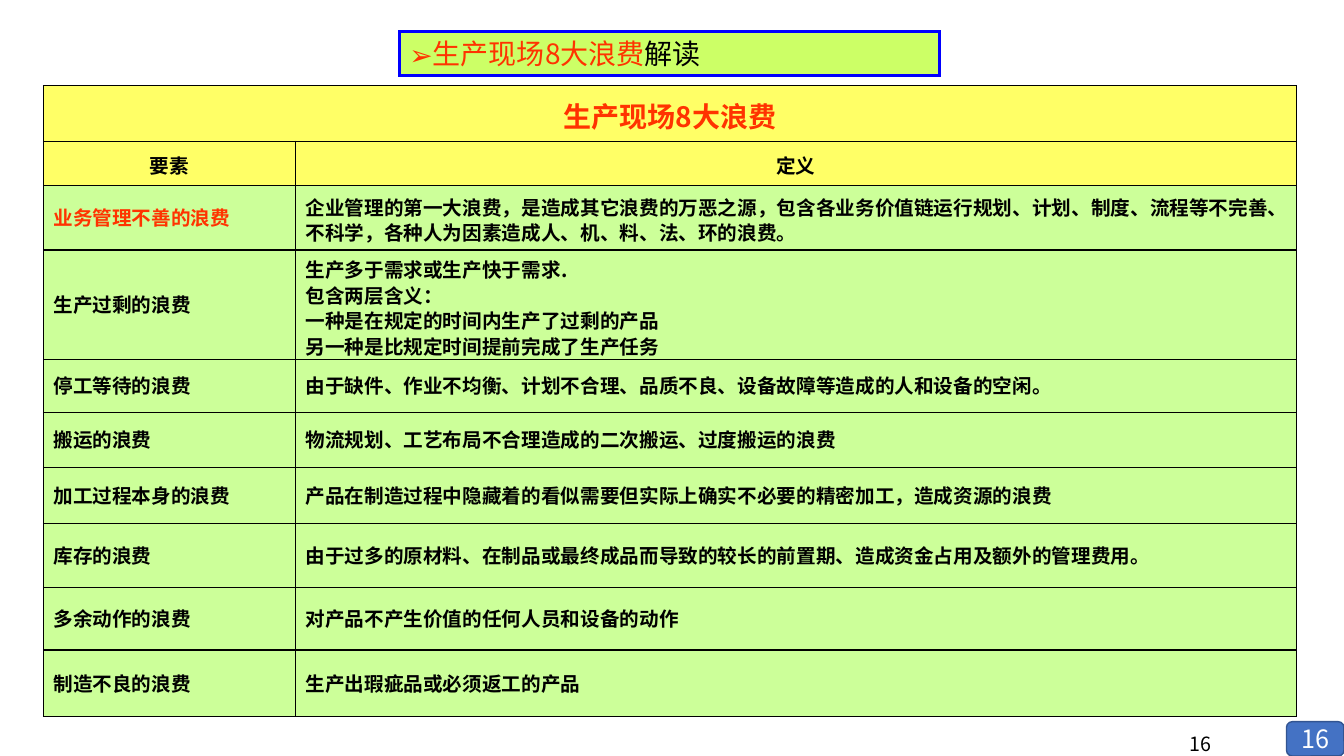
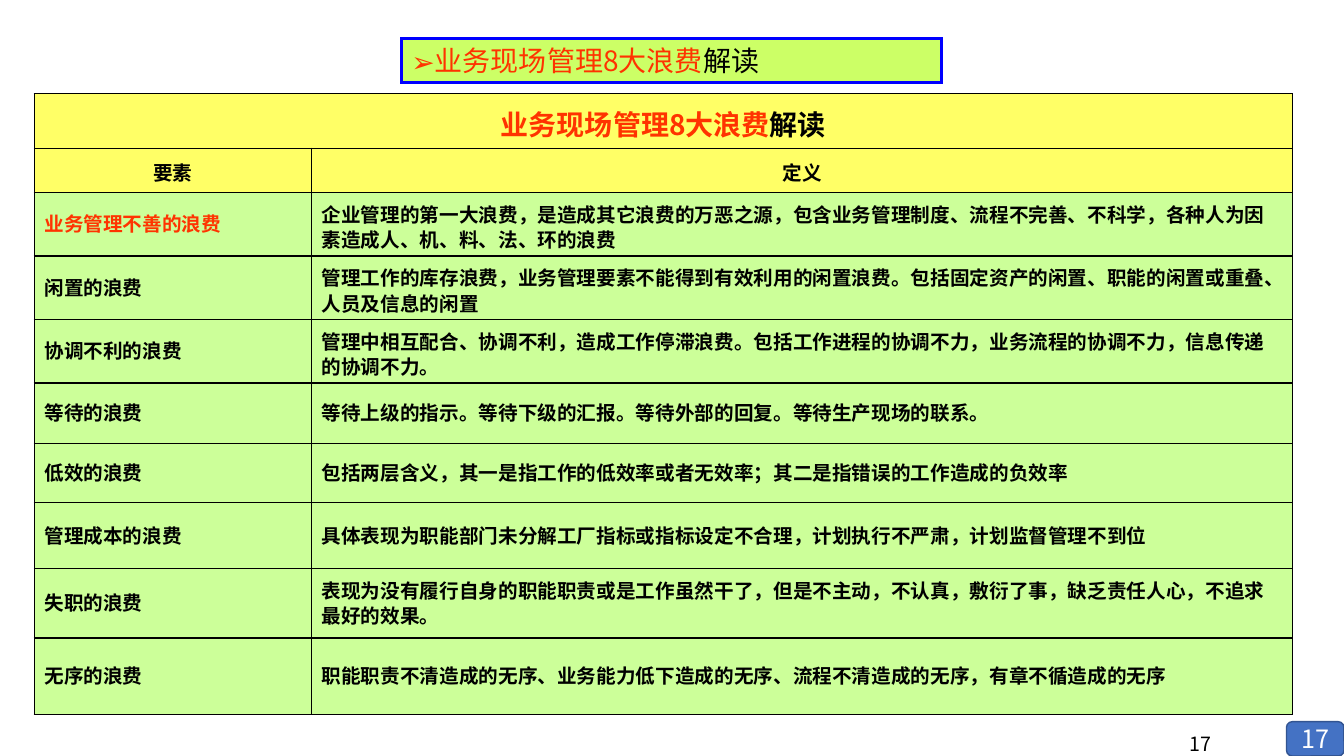
"""Build two slides of tables that explain the eight wastes."""
import dataclasses

import lxml.etree
import pptx
import pptx.dml.color
import pptx.enum.shapes
import pptx.enum.text
import pptx.oxml.ns
import pptx.util

Inches = pptx.util.Inches
Pt = pptx.util.Pt
qn = pptx.oxml.ns.qn
ALIGN = pptx.enum.text.PP_ALIGN
ANCHOR = pptx.enum.text.MSO_ANCHOR
SHAPE = pptx.enum.shapes.MSO_SHAPE

FONT = "Noto Sans CJK SC"
BLACK, WHITE, RED = "000000", "FFFFFF", "FF3300"
YELLOW, GREEN, LIME = "FFFF66", "CCFF99", "CCFF66"
BLUE, BADGE, BADGE_LINE = "0000FF", "4472C4", "325491"
HEADINGS = ("要素", "定义")
SUFFIX = "解读"
MARGIN = 0.09


@dataclasses.dataclass
class WasteSlide:
    """Content and geometry of one waste table slide."""
    number: int
    topic: str
    table_suffix: str
    title_at: tuple[float, float]
    table_at: tuple[float, float]
    cols: tuple[float, float]
    heights: tuple[float, ...]
    tight_rows: dict[int, float]
    rows: tuple[tuple[str, str], ...]


SLIDES = (
    WasteSlide(
        16, "生产现场8大浪费", "", (3.96, 0.31), (0.43, 0.85), (2.5, 9.93),
        (0.55, 0.44, 0.64, 1.09, 0.52, 0.55, 0.55, 0.64, 0.62, 0.66),
        {2: MARGIN, 3: 0.07},
        (
            ("业务管理不善的浪费", "企业管理的第一大浪费，是造成其它浪费的万恶之源，包含各业务价值链运行规划、计划、制度、流程等不完善、不科学，各种人为因素造成人、机、料、法、环的浪费。"),
            ("生产过剩的浪费", "生产多于需求或生产快于需求.\n包含两层含义：\n一种是在规定的时间内生产了过剩的产品\n另一种是比规定时间提前完成了生产任务"),
            ("停工等待的浪费", "由于缺件、作业不均衡、计划不合理、品质不良、设备故障等造成的人和设备的空闲。"),
            ("搬运的浪费", "物流规划、工艺布局不合理造成的二次搬运、过度搬运的浪费"),
            ("加工过程本身的浪费", "产品在制造过程中隐藏着的看似需要但实际上确实不必要的精密加工，造成资源的浪费"),
            ("库存的浪费", "由于过多的原材料、在制品或最终成品而导致的较长的前置期、造成资金占用及额外的管理费用。"),
            ("多余动作的浪费", "对产品不产生价值的任何人员和设备的动作"),
            ("制造不良的浪费", "生产出瑕疵品或必须返工的产品"),
        ),
    ),
    WasteSlide(
        17, "业务现场管理8大浪费", SUFFIX, (3.98, 0.38), (0.34, 0.93), (2.75, 9.73),
        (0.54, 0.44, 0.63, 0.63, 0.63, 0.6, 0.59, 0.65, 0.69, 0.76),
        {2: MARGIN, 3: MARGIN, 4: MARGIN, 8: MARGIN},
        (
            ("业务管理不善的浪费", "企业管理的第一大浪费，是造成其它浪费的万恶之源，包含业务管理制度、流程不完善、不科学，各种人为因素造成人、机、料、法、环的浪费"),
            ("闲置的浪费", "管理工作的库存浪费，业务管理要素不能得到有效利用的闲置浪费。包括固定资产的闲置、职能的闲置或重叠、人员及信息的闲置"),
            ("协调不利的浪费", "管理中相互配合、协调不利，造成工作停滞浪费。包括工作进程的协调不力，业务流程的协调不力，信息传递的协调不力。"),
            ("等待的浪费", "等待上级的指示。等待下级的汇报。等待外部的回复。等待生产现场的联系。"),
            ("低效的浪费", "包括两层含义，其一是指工作的低效率或者无效率；其二是指错误的工作造成的负效率"),
            ("管理成本的浪费", "具体表现为职能部门未分解工厂指标或指标设定不合理，计划执行不严肃，计划监督管理不到位"),
            ("失职的浪费", "表现为没有履行自身的职能职责或是工作虽然干了，但是不主动，不认真，敷衍了事，缺乏责任人心，不追求最好的效果。"),
            ("无序的浪费", "职能职责不清造成的无序、业务能力低下造成的无序、流程不清造成的无序，有章不循造成的无序"),
        ),
    ),
)


def rgb(value: str) -> pptx.dml.color.RGBColor:
    """Turn a hex string into a colour."""
    return pptx.dml.color.RGBColor.from_string(value)


def write(tf, text: str, *, size: float = 14, color: str = BLACK,
          bold: bool = False, align=ALIGN.LEFT, spacing: float | None = None,
          suffix: str = "", bullet: str = "") -> None:
    """Write lines of text, with an optional black suffix on each."""
    for i, line in enumerate(text.split("\n")):
        p = tf.add_paragraph() if i else tf.paragraphs[0]
        p.alignment = align
        p.space_before = Pt(0)
        if spacing:
            p.line_spacing = spacing
        if bullet:
            props = p._p.get_or_add_pPr()
            props.set("marL", "0")
            props.set("indent", "0")
            lxml.etree.SubElement(props, qn("a:buFont"), typeface=FONT)
            lxml.etree.SubElement(props, qn("a:buChar"), char=bullet)
        for part, part_color in ((line, color), (suffix, BLACK)):
            if part:
                r = p.add_run()
                r.text = part
                r.font.size, r.font.bold, r.font.name = Pt(size), bold, FONT
                r.font.color.rgb = rgb(part_color)
                lxml.etree.SubElement(r._r.rPr, qn("a:ea"), typeface=FONT)


def paint(sp, fill: str, line: str, width: float) -> None:
    """Give a shape a solid fill and a mitred outline."""
    sp.fill.solid()
    sp.fill.fore_color.rgb = rgb(fill)
    sp.line.color.rgb = rgb(line)
    sp.line.width = Pt(width)
    outline = sp._element.spPr.find(qn("a:ln"))
    lxml.etree.SubElement(outline, qn("a:miter"), lim="800000")


def style_cell(cell, fill: str, tight_top: float | None) -> None:
    """Set a cell's margins, anchor, fill and black borders."""
    tight = tight_top is not None
    cell.margin_left = cell.margin_right = Inches(0.1)
    cell.margin_top = Inches(tight_top if tight else MARGIN)
    cell.margin_bottom = Inches(0 if tight else MARGIN)
    cell.vertical_anchor = ANCHOR.TOP if tight else ANCHOR.MIDDLE
    cell.fill.solid()
    cell.fill.fore_color.rgb = rgb(fill)
    props = cell._tc.get_or_add_tcPr()
    for i, side in enumerate(("lnL", "lnR", "lnT", "lnB")):
        border = lxml.etree.Element(qn(f"a:{side}"), w=str(Pt(1)))
        solid = lxml.etree.SubElement(border, qn("a:solidFill"))
        lxml.etree.SubElement(solid, qn("a:srgbClr"), val=BLACK)
        props.insert(i, border)


def add_title(s, data: WasteSlide) -> None:
    """Format the title placeholder as a framed banner."""
    sp = s.shapes.title
    sp.left, sp.top = map(Inches, data.title_at)
    sp.width, sp.height = Inches(5.36), Inches(0.44)
    paint(sp, LIME, BLUE, 2)
    tf = sp.text_frame
    tf.word_wrap = True
    tf.auto_size = pptx.enum.text.MSO_AUTO_SIZE.NONE
    tf.vertical_anchor = ANCHOR.TOP
    write(tf, data.topic, size=20, color=RED, suffix=SUFFIX, bullet="➢")


def add_waste_table(s, data: WasteSlide) -> None:
    """Add the table of wastes and their definitions."""
    left, top = data.table_at
    table = s.shapes.add_table(
        len(data.heights), len(data.cols), Inches(left), Inches(top),
        Inches(sum(data.cols)), Inches(sum(data.heights))).table
    for col, width in zip(table.columns, data.cols):
        col.width = Inches(width)
    for i, (row, height) in enumerate(zip(table.rows, data.heights)):
        row.height = Inches(height)
        for j, cell in enumerate(row.cells):
            if i < 2:
                style_cell(cell, YELLOW, MARGIN)
            else:
                style_cell(cell, GREEN, data.tight_rows.get(i) if j else None)
    heading = table.cell(0, 0)
    heading.merge(table.cell(0, 1))
    write(heading.text_frame, data.topic, size=20, color=RED, bold=True,
          align=ALIGN.CENTER, suffix=data.table_suffix)
    for j, text in enumerate(HEADINGS):
        write(table.cell(1, j).text_frame, text, bold=True, align=ALIGN.CENTER)
    for i, texts in enumerate(data.rows):
        for j, text in enumerate(texts):
            write(table.cell(i + 2, j).text_frame, text, bold=True, spacing=0.9,
                  color=RED if i == j == 0 else BLACK)


def add_page_number(s, number: int) -> None:
    """Add the plain page number and its badge."""
    box = s.shapes.add_textbox(Inches(9.58), Inches(7.21), Inches(2.53), Inches(0.52))
    box.text_frame.word_wrap = True
    write(box.text_frame, str(number), align=ALIGN.RIGHT)
    badge = s.shapes.add_shape(SHAPE.ROUNDED_RECTANGLE, Inches(12.76), Inches(7.16),
                               Inches(0.57), Inches(0.34))
    badge.shadow.inherit = False
    paint(badge, BADGE, BADGE_LINE, 1)
    badge.text_frame.vertical_anchor = ANCHOR.MIDDLE
    write(badge.text_frame, str(number), size=18, color=WHITE, align=ALIGN.CENTER)


def main() -> None:
    """Build and save the presentation."""
    prs = pptx.Presentation()
    prs.slide_width, prs.slide_height = Inches(13.33), Inches(7.5)
    for data in SLIDES:
        s = prs.slides.add_slide(prs.slide_layouts[5])
        add_title(s, data)
        add_waste_table(s, data)
        add_page_number(s, data.number)
    prs.save("out.pptx")


if __name__ == "__main__":
    main()
